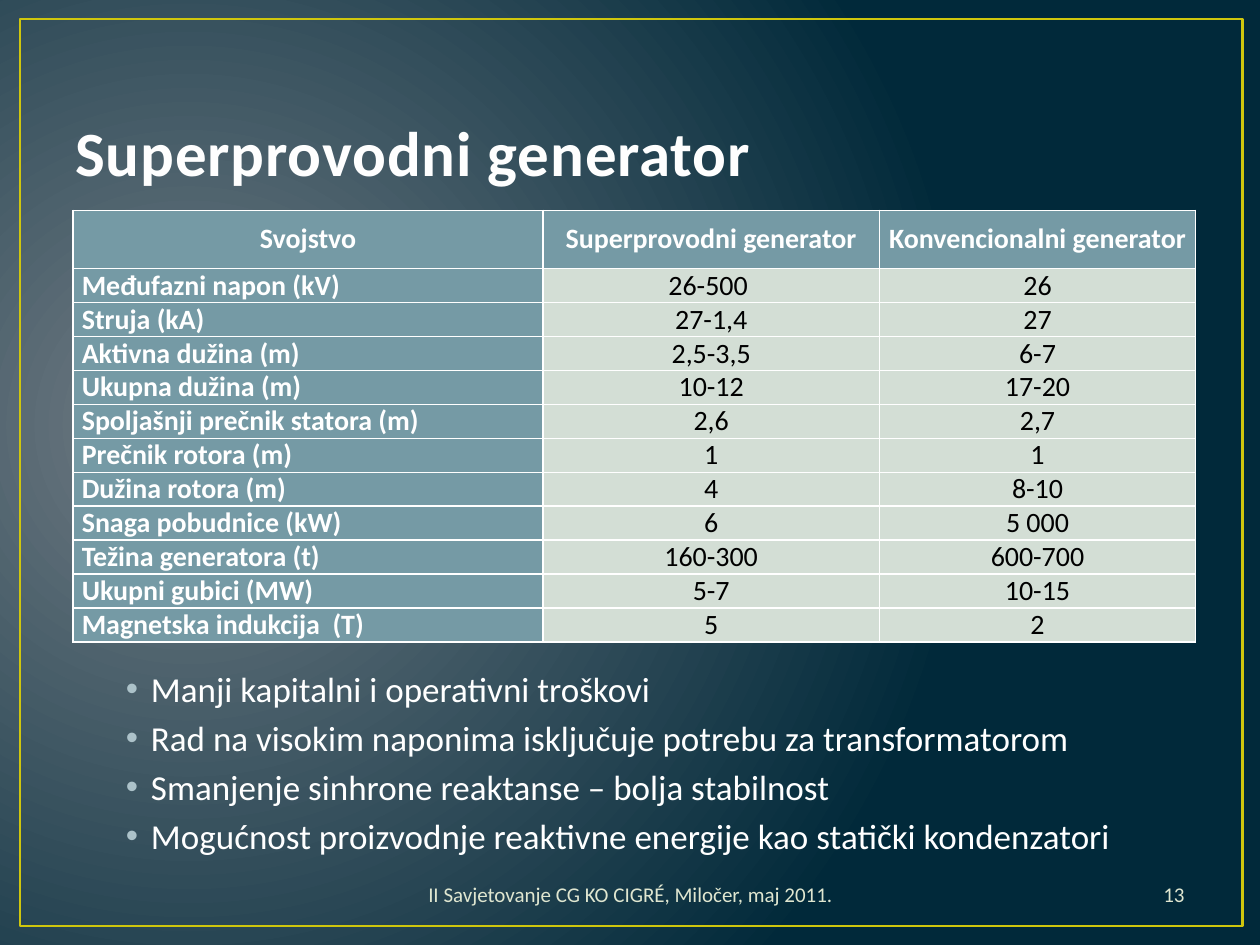
from lxml import etree
from pptx import Presentation
from pptx.dml.color import RGBColor
from pptx.enum import shapes, text
from pptx.oxml import ns
from pptx.util import Inches, Pt

FONT = "Calibri"
WHITE, BLACK = "FFFFFF", "000000"
HEADER_FILL, VALUE_FILL = "759AA5", "D3DED5"
FOOTER_COLOR = "DFE6D0"

HEADINGS = ("Svojstvo", "Superprovodni generator", "Konvencionalni generator")
PROPERTIES = [
    ("Međufazni napon (kV)", "26-500 ", "26"),
    ("Struja (kA)", "27-1,4", "27"),
    ("Aktivna dužina (m)", "2,5-3,5", "6-7"),
    ("Ukupna dužina (m)", "10-12", "17-20"),
    ("Spoljašnji prečnik statora (m)", "2,6", "2,7"),
    ("Prečnik rotora (m)", "1", "1"),
    ("Dužina rotora (m)", "4", "8-10"),
    ("Snaga pobudnice (kW)", "6", "5 000"),
    ("Težina generatora (t)", "160-300", "600-700"),
    ("Ukupni gubici (MW)", "5-7", "10-15"),
    ("Magnetska indukcija  (T)", "5", "2"),
]
ADVANTAGES = [
    "Manji kapitalni i operativni troškovi",
    "Rad na visokim naponima isključuje potrebu za transformatorom",
    "Smanjenje sinhrone reaktanse – bolja stabilnost",
    "Mogućnost proizvodnje reaktivne energije kao statički kondenzatori",
]


def rgb(value):
    return RGBColor.from_string(value)


def add_xml(parent, tag, **attributes):
    return etree.SubElement(parent, ns.qn(tag), attributes)


def add_solid_line(parent, tag, color, points):
    line = add_xml(parent, tag, w=str(Pt(points)))
    add_xml(add_xml(line, "a:solidFill"), "a:srgbClr", val=color)
    return line


def write(paragraph, content, size, color, bold=False, align=text.PP_ALIGN.LEFT):
    paragraph.alignment = align
    run = paragraph.add_run()
    run.text = content
    settings = {"name": FONT, "size": Pt(size), "bold": bold}
    for name, value in settings.items():
        setattr(run.font, name, value)
    run.font.color.rgb = rgb(color)
    return run


def add_text_frame(slide, left, top, width, height, anchor):
    box = slide.shapes.add_textbox(Inches(left), Inches(top), Inches(width), Inches(height))
    box.text_frame.word_wrap = True
    box.text_frame.vertical_anchor = anchor
    return box.text_frame


def paint_background(slide):
    """Radial gradient centred at the left."""
    fill = slide.background.fill
    fill.gradient()
    for stop, position, color in zip(fill.gradient_stops, (0, 1), ("717C84", "01293A")):
        stop.position = position
        stop.color.rgb = rgb(color)
    gradient = slide.element.xpath(".//p:bg//a:gradFill")[0]
    gradient.remove(gradient.find(ns.qn("a:lin")))
    circle = add_xml(gradient, "a:path", path="circle")
    add_xml(circle, "a:fillToRect", l="15000", t="50000", r="85000", b="60000")


def add_border(slide):
    border = slide.shapes.add_shape(
        shapes.MSO_SHAPE.RECTANGLE, Inches(0.16), Inches(0.15), Inches(9.7), Inches(7.2))
    border.shadow.inherit = False
    border.fill.background()
    border.line.color.rgb = rgb("CFC60D")
    border.line.width = Pt(1.5)


def add_title(slide):
    frame = add_text_frame(slide, 0.5, 0.3, 9, 1.25, text.MSO_ANCHOR.BOTTOM)
    run = write(frame.paragraphs[0], "Superprovodni generator", 36, "FEFEFE", bold=True)
    properties = run.font._element
    properties.set("spc", "50")
    properties.insert(0, add_solid_line(properties, "a:ln", "384F55", 1.05))


def add_bullets(slide):
    frame = add_text_frame(slide, 0.5, 5.25, 9, 1.75, text.MSO_ANCHOR.TOP)
    for index, advantage in enumerate(ADVANTAGES):
        paragraph = frame.add_paragraph() if index else frame.paragraphs[0]
        write(paragraph, advantage, 20, WHITE)
        paragraph.space_before = Pt(4)
        properties = paragraph._p.get_or_add_pPr()
        properties.set("marL", str(Inches(0.6)))
        properties.set("indent", str(Inches(-0.2)))
        add_xml(add_xml(properties, "a:buClr"), "a:srgbClr", val="ACC2C9")
        add_xml(properties, "a:buFont", typeface="Arial")
        add_xml(properties, "a:buChar", char="•")


def fill_cell(cell, content, is_heading, align):
    settings = {
        "margin_left": Inches(0.07), "margin_right": Inches(0.07),
        "margin_top": 0, "margin_bottom": 0,
        "vertical_anchor": text.MSO_ANCHOR.MIDDLE,
    }
    for name, value in settings.items():
        setattr(cell, name, value)
    for side in "LRTB":
        add_solid_line(cell._tc.get_or_add_tcPr(), f"a:ln{side}", WHITE, 1)
    cell.fill.solid()
    cell.fill.fore_color.rgb = rgb(HEADER_FILL if is_heading else VALUE_FILL)
    write(cell.text_frame.paragraphs[0], content, 16,
          WHITE if is_heading else BLACK, is_heading, align)


def add_comparison_table(slide):
    rows = [HEADINGS, *PROPERTIES]
    table = slide.shapes.add_table(
        len(rows), len(HEADINGS), Inches(0.58), Inches(1.67), Inches(8.92), Inches(3.47)).table
    for column, width in zip(table.columns, (3.73, 2.67, 2.51)):
        column.width = Inches(width)
    for r, row in enumerate(rows):
        table.rows[r].height = Inches(0.27 if r else 0.46)
        for c, content in enumerate(row):
            is_label = r > 0 and c == 0
            align = text.PP_ALIGN.LEFT if is_label else text.PP_ALIGN.CENTER
            fill_cell(table.cell(r, c), content, r == 0 or c == 0, align)


def add_footer(slide, content, left, width, align):
    frame = add_text_frame(slide, left, 6.9, width, 0.4, text.MSO_ANCHOR.MIDDLE)
    write(frame.paragraphs[0], content, 12, FOOTER_COLOR, align=align)


def main():
    deck = Presentation()
    deck.slide_width, deck.slide_height = Inches(10), Inches(7.5)
    slide = deck.slides.add_slide(deck.slide_layouts[6])
    paint_background(slide)
    add_border(slide)
    add_title(slide)
    add_bullets(slide)
    add_footer(slide, "II Savjetovanje CG KO CIGRÉ, Miločer, maj 2011.",
               3.1, 3.81, text.PP_ALIGN.CENTER)
    add_footer(slide, "13", 7.17, 2.33, text.PP_ALIGN.RIGHT)
    add_comparison_table(slide)
    deck.save("out.pptx")


if __name__ == "__main__":
    main()
